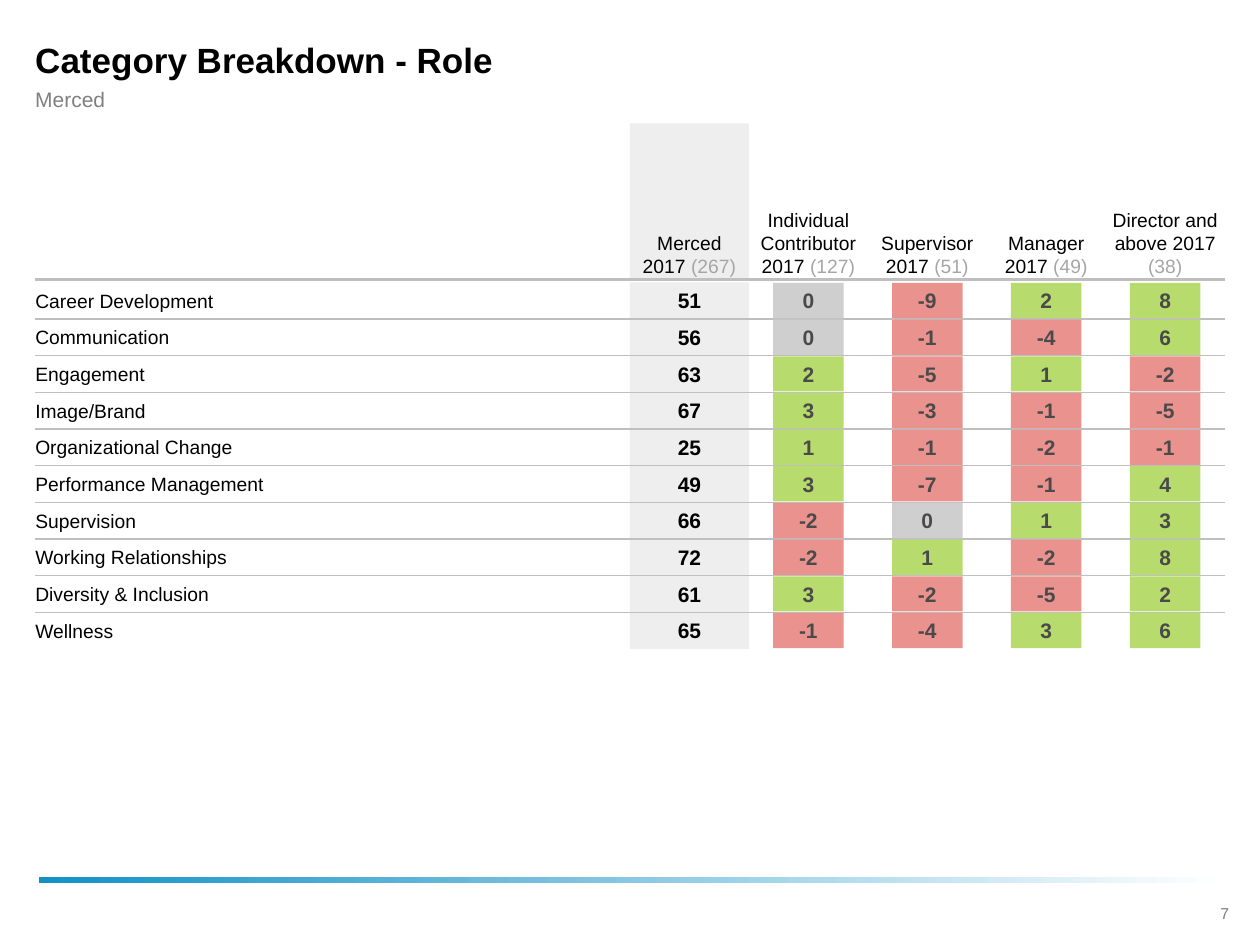
import pptx
import pptx.util
import pptx.dml.color
import pptx.enum.shapes
import pptx.enum.text
import pptx.oxml.ns
import lxml.etree

Inches = pptx.util.Inches
RGBColor = pptx.dml.color.RGBColor
ALIGN = pptx.enum.text.PP_ALIGN
ANCHOR = pptx.enum.text.MSO_ANCHOR

BLACK = RGBColor(0x00, 0x00, 0x00)
WHITE = RGBColor(0xFF, 0xFF, 0xFF)
BLUE = RGBColor(0x12, 0x91, 0xC7)
SUBTITLE = RGBColor(0x80, 0x80, 0x80)
PAGE_GREY = RGBColor(0x7F, 0x7F, 0x7F)
COUNT_GREY = RGBColor(0xA6, 0xA6, 0xA6)
RULE_GREY = RGBColor(0xBF, 0xBF, 0xBF)
BAND_GREY = RGBColor(0xEE, 0xEE, 0xEE)
SCORE_GREY = RGBColor(0x4A, 0x4A, 0x4A)
NEUTRAL = RGBColor(0xCF, 0xCF, 0xCF)
NEGATIVE = RGBColor(0xE9, 0x92, 0x8E)
POSITIVE = RGBColor(0xB7, 0xDB, 0x6C)

COLUMNS = [("Merced 2017 ", "(267)"), ("Individual Contributor 2017 ", "(127)"),
           ("Supervisor 2017 ", "(51)"), ("Manager 2017 ", "(49)"),
           ("Director and above 2017 ", "(38)")]

# Category, overall score, then each role's difference from it
ROWS = [
    ("Career Development", 51, 0, -9, 2, 8),
    ("Communication", 56, 0, -1, -4, 6),
    ("Engagement", 63, 2, -5, 1, -2),
    ("Image/Brand", 67, 3, -3, -1, -5),
    ("Organizational Change", 25, 1, -1, -2, -1),
    ("Performance Management", 49, 3, -7, -1, 4),
    ("Supervision", 66, -2, 0, 1, 3),
    ("Working Relationships", 72, -2, 1, -2, 8),
    ("Diversity & Inclusion", 61, 3, -2, -5, 2),
    ("Wellness", 65, -1, -4, 3, 6),
]


def set_text(sp, runs, size, bold=False, align=ALIGN.LEFT, anchor=ANCHOR.MIDDLE,
             insets=(0, 0, 0, 0), wrap=True):
    """Write (text, colour) runs as the one paragraph of a shape."""
    tf = sp.text_frame
    left, top, right, bottom = (Inches(i) for i in insets)
    frame_format = {"margin_left": left, "margin_top": top, "margin_right": right,
                    "margin_bottom": bottom, "word_wrap": wrap, "vertical_anchor": anchor}
    for name, value in frame_format.items():
        setattr(tf, name, value)
    p = tf.paragraphs[0]
    p.alignment = align
    for text, color in runs:
        r = p.add_run()
        r.text = text
        for name, value in {"name": "Arial", "size": pptx.util.Pt(size), "bold": bold}.items():
            setattr(r.font, name, value)
        r.font.color.rgb = color


def add_text(s, x, y, w, h, runs, size, **text_format):
    sp = s.shapes.add_textbox(Inches(x), Inches(y), Inches(w), Inches(h))
    set_text(sp, runs, size, **text_format)
    return sp


def add_rect(s, x, y, w, h, color=None):
    sp = s.shapes.add_shape(pptx.enum.shapes.MSO_SHAPE.RECTANGLE,
                            Inches(x), Inches(y), Inches(w), Inches(h))
    sp.shadow.inherit = False
    sp.line.fill.background()
    if color is not None:
        sp.fill.solid()
        sp.fill.fore_color.rgb = color
    return sp


def add_rule(s, x, y, w, weight):
    line = s.shapes.add_connector(pptx.enum.shapes.MSO_CONNECTOR.STRAIGHT,
                                  Inches(x), Inches(y), Inches(x + w), Inches(y))
    line.line.color.rgb = RULE_GREY
    line.line.width = pptx.util.Pt(weight)
    lxml.etree.SubElement(line._element.spPr, pptx.oxml.ns.qn("a:effectLst"))


def add_footer(s, x, y, w):
    """Fading bar with the page number below its right end."""
    bar = add_rect(s, x, y, w, 0.05)
    bar.fill.gradient()
    bar.fill.gradient_angle = 0
    for stop, color in zip(bar.fill.gradient_stops, (BLUE, WHITE)):
        stop.color.rgb = color
    add_text(s, x + w - 0.27, y + 0.16, 0.52, 0.25, [("7", PAGE_GREY)], 9,
             align=ALIGN.CENTER, anchor=ANCHOR.TOP, insets=(0.1, 0.05, 0.1, 0.05))


def add_heading(s, x, y, w):
    insets = (0, 0, 0.35, 0)
    add_text(s, x, y, w, 0.38, [("Category Breakdown - Role", BLACK)], 20,
             bold=True, insets=insets)
    add_text(s, x, y + 0.4, w, 0.21, [("Merced", SUBTITLE)], 12, insets=insets)


def add_breakdown(s, x, y, w, h):
    """Header and score rows; labels take half the width, columns a tenth each."""
    header_h = 1.25
    col_w = w / 10
    label_w = w / 2
    rows_y = y + header_h + 0.01
    row_h = (y + h - rows_y) / len(ROWS)
    chip_w, chip_h = 0.56, 0.28
    pad = (0.03,) * 4
    col_x = [x + label_w + i * col_w for i in range(len(COLUMNS))]
    row_y = [rows_y + i * row_h for i in range(len(ROWS))]

    # Grey band behind the overall column
    add_rect(s, col_x[0], y, col_w, header_h, BAND_GREY)
    for top in row_y:
        add_rect(s, col_x[0], top, col_w, row_h, BAND_GREY)

    # Column headers
    add_rule(s, x, rows_y - 0.02, w, 1.5)
    for left, (name, count) in zip(col_x, COLUMNS):
        add_text(s, left, y, col_w, header_h, [(name, BLACK), (count, COUNT_GREY)], 11,
                 align=ALIGN.CENTER, anchor=ANCHOR.BOTTOM, insets=pad)

    # Score rows
    for top, (label, overall, *differences) in zip(row_y, ROWS):
        if top != row_y[-1]:
            add_rule(s, x, top + row_h, w, 0.75)
        add_text(s, x, top + 0.03, label_w, row_h - 0.06, [(label, BLACK)], 11)
        add_text(s, col_x[0], top, col_w, row_h, [(str(overall), BLACK)], 12,
                 bold=True, align=ALIGN.CENTER, insets=pad)
        for left, value in zip(col_x[1:], differences):
            color = POSITIVE if value > 0 else NEGATIVE if value < 0 else NEUTRAL
            chip = add_rect(s, left + (col_w - chip_w) / 2, top + (row_h - chip_h) / 2,
                            chip_w, chip_h, color)
            set_text(chip, [(str(value), SCORE_GREY)], 12, bold=True, align=ALIGN.CENTER,
                     insets=(0, 0.05, 0, 0.05), wrap=False)


def main():
    prs = pptx.Presentation()
    prs.slide_width, prs.slide_height = Inches(10), Inches(7.5)
    s = prs.slides.add_slide(prs.slide_layouts[6])
    add_footer(s, 0.31, 6.96, 9.42)
    add_heading(s, 0.28, 0.28, 9.44)
    add_breakdown(s, 0.28, 0.98, 9.44, 4.17)
    prs.save("out.pptx")


if __name__ == "__main__":
    main()
